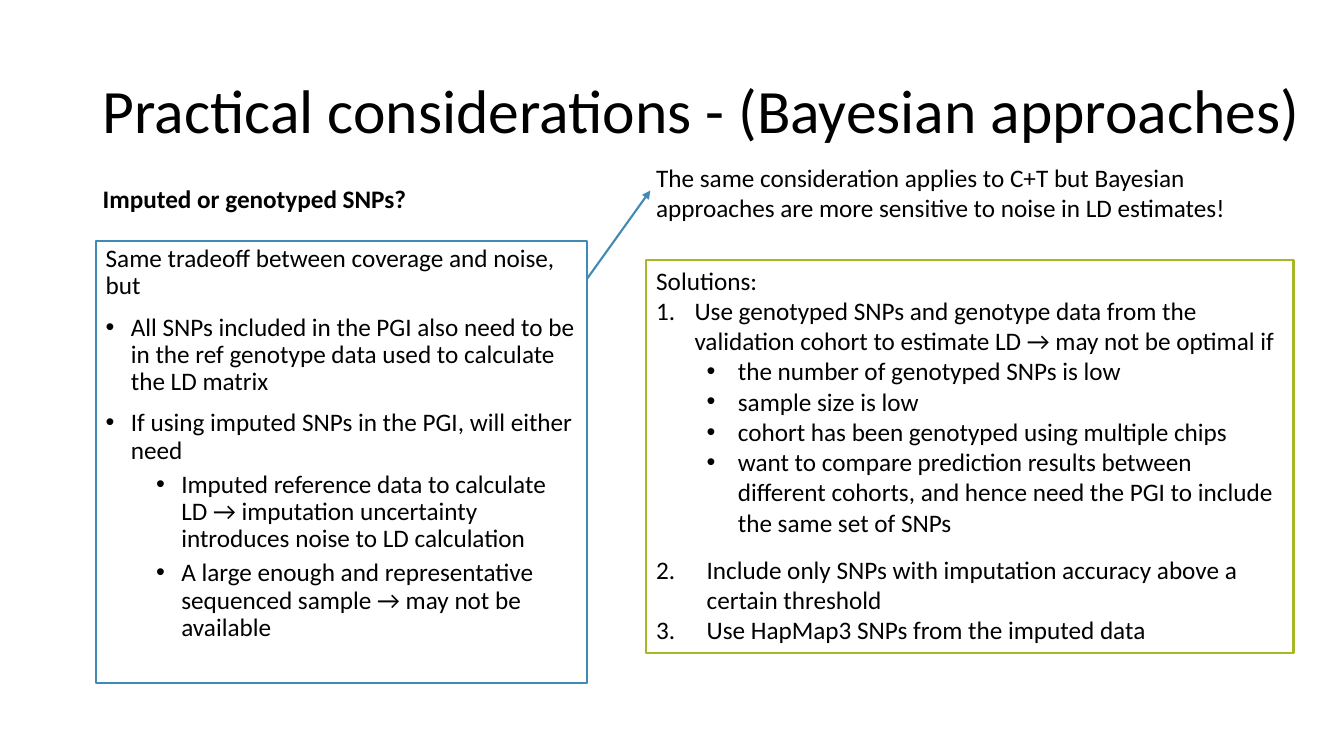
import pptx
import pptx.util
import pptx.dml.color
import pptx.enum.shapes
import pptx.enum.text
import pptx.oxml.ns
import lxml.etree

PX = 9144
BLACK = pptx.dml.color.RGBColor(0x00, 0x00, 0x00)
WHITE = pptx.dml.color.RGBColor(0xFF, 0xFF, 0xFF)
BLUE = pptx.dml.color.RGBColor(0x41, 0x8A, 0xB3)
GREEN = pptx.dml.color.RGBColor(0xA6, 0xB7, 0x27)

TRADEOFFS = [
    ("Same tradeoff between coverage and noise, but", {}),
    ("All SNPs included in the PGI also need to be in the ref genotype data used to calculate the LD matrix",
     dict(bullet="•", indent=25, hang=25)),
    ("If using imputed SNPs in the PGI, will either need", dict(bullet="•", indent=25, hang=25)),
    ("Imputed reference data to calculate LD → imputation uncertainty introduces noise to LD calculation",
     dict(bullet="•", level=1, indent=75, hang=25, before=5)),
    ("A large enough and representative sequenced sample → may not be available",
     dict(bullet="•", level=1, indent=75, hang=25, before=5)),
]
LIMIT = dict(bullet="•", level=1, indent=81, hang=31)
SOLUTIONS = [
    ("Solutions:", {}),
    ("Use genotyped SNPs and genotype data from the validation cohort to estimate LD → may not be optimal if",
     dict(bullet="1.", indent=38, hang=38)),
    ("the number of genotyped SNPs is low", LIMIT),
    ("sample size is low", LIMIT),
    ("cohort has been genotyped using multiple chips", LIMIT),
    ("want to compare prediction results between different cohorts, and hence need the PGI to include "
     "the same set of SNPs", dict(LIMIT, after=12)),
    ("Include only SNPs with imputation accuracy above a certain threshold",
     dict(bullet="1.", indent=50, hang=50)),
    ("Use HapMap3 SNPs from the imputed data", dict(bullet="1.", indent=50, hang=50)),
]


def px(*lengths):
    return [n * PX for n in lengths]


def sub(parent, tag, **attrs):
    return lxml.etree.SubElement(parent, pptx.oxml.ns.qn(tag), **attrs)


def add_text(p, text, size=18, bold=False, level=0, indent=0, hang=0,
             bullet=None, spacing=1.0, before=0, after=0):
    p.alignment = pptx.enum.text.PP_ALIGN.LEFT
    p.level = level
    p.line_spacing = spacing
    p.space_before = pptx.util.Pt(before)
    p.space_after = pptx.util.Pt(after)
    pPr = p._p.get_or_add_pPr()
    pPr.set("marL", str(indent * PX))
    pPr.set("indent", str(-hang * PX))
    if bullet:
        sub(pPr, "a:buFont", typeface="Arial" if bullet == "•" else "+mj-lt")
    if bullet == "•":
        sub(pPr, "a:buChar", char=bullet)
    elif bullet:
        sub(pPr, "a:buAutoNum", type="arabicPeriod")
    r = p.add_run()
    r.text = text
    r.font.name = "Calibri"
    r.font.size = pptx.util.Pt(size)
    r.font.bold = bold
    r.font.color.rgb = BLACK


def add_label(s, box, text, anchor=pptx.enum.text.MSO_ANCHOR.TOP, **fmt):
    tf = s.shapes.add_textbox(*px(*box)).text_frame
    tf.word_wrap = True
    tf.vertical_anchor = anchor
    add_text(tf.paragraphs[0], text, **fmt)


def add_panel(s, box, color, items, fill=None, **common):
    sp = s.shapes.add_shape(pptx.enum.shapes.MSO_SHAPE.RECTANGLE, *px(*box))
    sp.shadow.inherit = False
    if fill is None:
        sp.fill.background()
    else:
        sp.fill.solid()
        sp.fill.fore_color.rgb = fill
    sp.line.color.rgb = color
    sp.line.width = pptx.util.Pt(1.5)
    tf = sp.text_frame
    tf.word_wrap = True
    tf.vertical_anchor = pptx.enum.text.MSO_ANCHOR.TOP
    for i, (text, fmt) in enumerate(items):
        p = tf.add_paragraph() if i else tf.paragraphs[0]
        add_text(p, text, **{**common, **fmt})


def add_arrow(s, start, end):
    cx = s.shapes.add_connector(pptx.enum.shapes.MSO_CONNECTOR.STRAIGHT, *px(*start, *end))
    cx.line.color.rgb = BLUE
    cx.line.width = pptx.util.Pt(1.5)
    sub(cx.line._get_or_add_ln(), "a:tailEnd", type="triangle")
    sub(cx._element.spPr, "a:effectLst")


def considerations_slide(prs):
    s = prs.slides.add_slide(prs.slide_layouts[6])
    add_label(s, (92, 40, 1212, 145), "Practical considerations - (Bayesian approaches)",
              anchor=pptx.enum.text.MSO_ANCHOR.MIDDLE, size=44, spacing=0.9)
    add_panel(s, (95, 239, 487, 439), BLUE, TRADEOFFS, fill=WHITE, spacing=0.9, before=10)
    add_label(s, (641, 156, 667, 71),
              "The same consideration applies to C+T but Bayesian approaches are more sensitive "
              "to noise in LD estimates!")
    add_label(s, (92, 177, 667, 40), "Imputed or genotyped SNPs?", bold=True)
    add_panel(s, (641, 258, 642, 390), GREEN, SOLUTIONS)
    add_arrow(s, (582, 277), (645, 189))


def main():
    prs = pptx.Presentation()
    prs.slide_width, prs.slide_height = px(1333, 750)
    considerations_slide(prs)
    prs.save("out.pptx")


if __name__ == "__main__":
    main()
